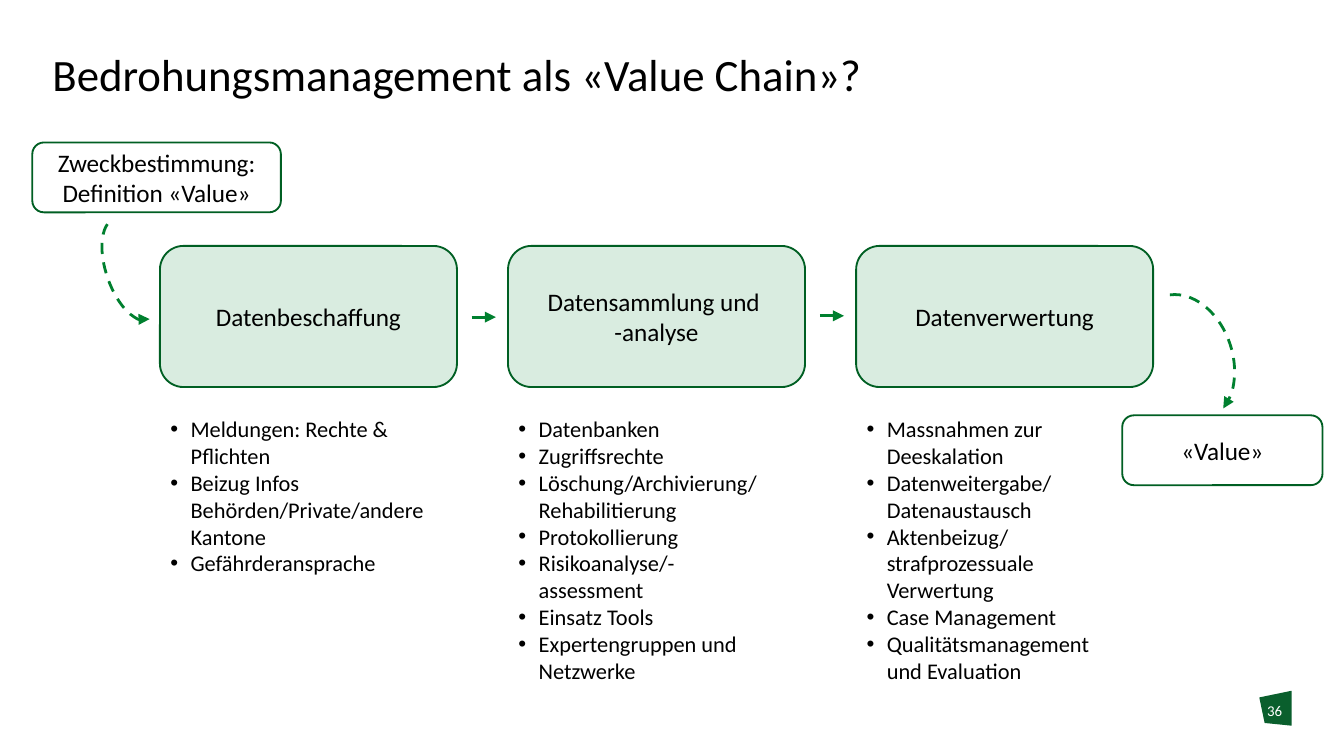
"""Build a slide showing threat management as a value chain."""
from lxml.etree import SubElement
from pptx import Presentation
from pptx.dml.color import RGBColor
from pptx.enum.dml import MSO_LINE
from pptx.enum.shapes import MSO_CONNECTOR, MSO_SHAPE
from pptx.enum.text import MSO_ANCHOR, PP_ALIGN
from pptx.oxml.ns import qn
from pptx.util import Inches, Pt

COLORS = {"text": "000000", "white": "FFFFFF", "badge": "0A5F2D",
          "border": "005F23", "green": "00802F"}
FONT = "Calibri"
STAGE_LEFT, STAGE_STEP = 1.19, 2.59
STAGES = [
    (["Datenbeschaffung"], 1.31,
     ["Meldungen: Rechte & Pflichten",
      "Beizug Infos Behörden/Private/andere Kantone",
      "Gefährderansprache"]),
    (["Datensammlung und ", "-analyse"], 1.92,
     ["Datenbanken", "Zugriffsrechte",
      "Löschung/Archivierung/Rehabilitierung", "Protokollierung",
      "Risikoanalyse/-assessment", "Einsatz Tools",
      "Expertengruppen und Netzwerke"]),
    (["Datenverwertung"], 1.92,
     ["Massnahmen zur Deeskalation", "Datenweitergabe/ Datenaustausch",
      "Aktenbeizug/strafprozessuale Verwertung", "Case Management",
      "Qualitätsmanagement und Evaluation"]),
]


def color(name):
    return RGBColor.from_string(COLORS[name])


def write(frame, lines, size, tone="text", align=None, bullet=False):
    frame.word_wrap = True
    for index, line in enumerate(lines):
        paragraph = frame.paragraphs[0] if index == 0 else frame.add_paragraph()
        paragraph.text = line
        paragraph.alignment = align
        if bullet:
            properties = paragraph._p.get_or_add_pPr()
            properties.set("marL", str(Inches(0.15)))
            properties.set("indent", str(Inches(-0.15)))
            SubElement(properties, qn("a:buFont"), typeface="Arial")
            SubElement(properties, qn("a:buChar"), char="•")
        paragraph.font.size = Pt(size)
        paragraph.font.name = FONT
        paragraph.font.color.rgb = color(tone)


def add_text(slide, box, lines, size, margins=True, **style):
    frame = slide.shapes.add_textbox(*map(Inches, box)).text_frame
    if not margins:
        frame.margin_left = frame.margin_right = 0
        frame.margin_top = frame.margin_bottom = 0
    write(frame, lines, size, **style)
    return frame


def add_box(slide, box, lines, tinted=False):
    shape = slide.shapes.add_shape(MSO_SHAPE.ROUNDED_RECTANGLE, *map(Inches, box))
    shape.shadow.inherit = False
    if tinted:
        shape.fill.solid()
        shape.fill.fore_color.rgb = color("green")
        tint = shape._element.spPr.find(".//" + qn("a:srgbClr"))
        SubElement(tint, qn("a:alpha"), val="15000")
    else:
        shape.fill.background()
    shape.line.color.rgb = color("border")
    shape.line.width = Pt(1)
    shape.text_frame.vertical_anchor = MSO_ANCHOR.MIDDLE
    write(shape.text_frame, lines, 13.5, align=PP_ALIGN.CENTER)


def style_arrow(line):
    line.color.rgb = color("green")
    line.width = Pt(1.5)
    SubElement(line._get_or_add_ln(), qn("a:tailEnd"), type="triangle")


def add_arc(slide, box, angles, flipped=False):
    shape = slide.shapes.add_shape(MSO_SHAPE.ARC, *map(Inches, box))
    shape.shadow.inherit = False
    shape.fill.background()
    shape.adjustments[0], shape.adjustments[1] = angles
    shape.rotation = 341.2
    if flipped:
        shape._element.spPr.find(qn("a:xfrm")).set("flipH", "1")
    shape.line.dash_style = MSO_LINE.DASH
    style_arrow(shape.line)


def add_arrow(slide, left, top, length):
    arrow = slide.shapes.add_connector(
        MSO_CONNECTOR.STRAIGHT, Inches(left), Inches(top),
        Inches(left + length), Inches(top))
    style_arrow(arrow.line)
    SubElement(arrow._element.spPr, qn("a:effectLst"))


def add_page_badge(slide, number):
    corners = [(9.37, 5.19), (9.61, 5.14), (9.61, 5.4), (9.41, 5.38)]
    points = [(Inches(x), Inches(y)) for x, y in corners]
    builder = slide.shapes.build_freeform(*points[0])
    builder.add_line_segments(points[1:], close=True)
    badge = builder.convert_to_shape()
    badge.shadow.inherit = False
    badge.fill.solid()
    badge.fill.fore_color.rgb = color("badge")
    badge.line.fill.background()
    add_text(slide, (9.37, 5.22, 0.23, 0.3), [number], 8, margins=False,
             tone="white", align=PP_ALIGN.CENTER)


def main():
    presentation = Presentation()
    presentation.slide_width = Inches(10)
    presentation.slide_height = Inches(10) * 9 // 16
    slide = presentation.slides.add_slide(presentation.slide_layouts[6])

    add_page_badge(slide, "36")
    title = add_text(slide, (0.39, 0.39, 9.22, 0.67),
                     ["Bedrohungsmanagement als «Value Chain»?"], 24, margins=False)
    title.paragraphs[0].line_spacing = 0.9

    for index, (name, list_height, tasks) in enumerate(STAGES):
        left = STAGE_LEFT + index * STAGE_STEP
        add_box(slide, (left, 1.83, 2.21, 1.05), name, tinted=True)
        add_text(slide, (left - 0.02, 3.04, 2.13, list_height), tasks, 12, bullet=True)
        if index < len(STAGES) - 1:
            add_arrow(slide, left + 2.32, 2.36 - index * 0.01, 0.18)

    add_box(slide, (0.24, 1.06, 1.85, 0.52), ["Zweckbestimmung: Definition «Value»"])
    add_box(slide, (8.35, 3.09, 1.49, 0.52), ["«Value»"])
    add_arc(slide, (0.79, 1.61, 0.37, 0.79), (167.27, 55.06), flipped=True)
    add_arc(slide, (8.46, 2.18, 0.71, 0.98), (165.47, 42.59))
    presentation.save("out.pptx")


if __name__ == "__main__":
    main()
